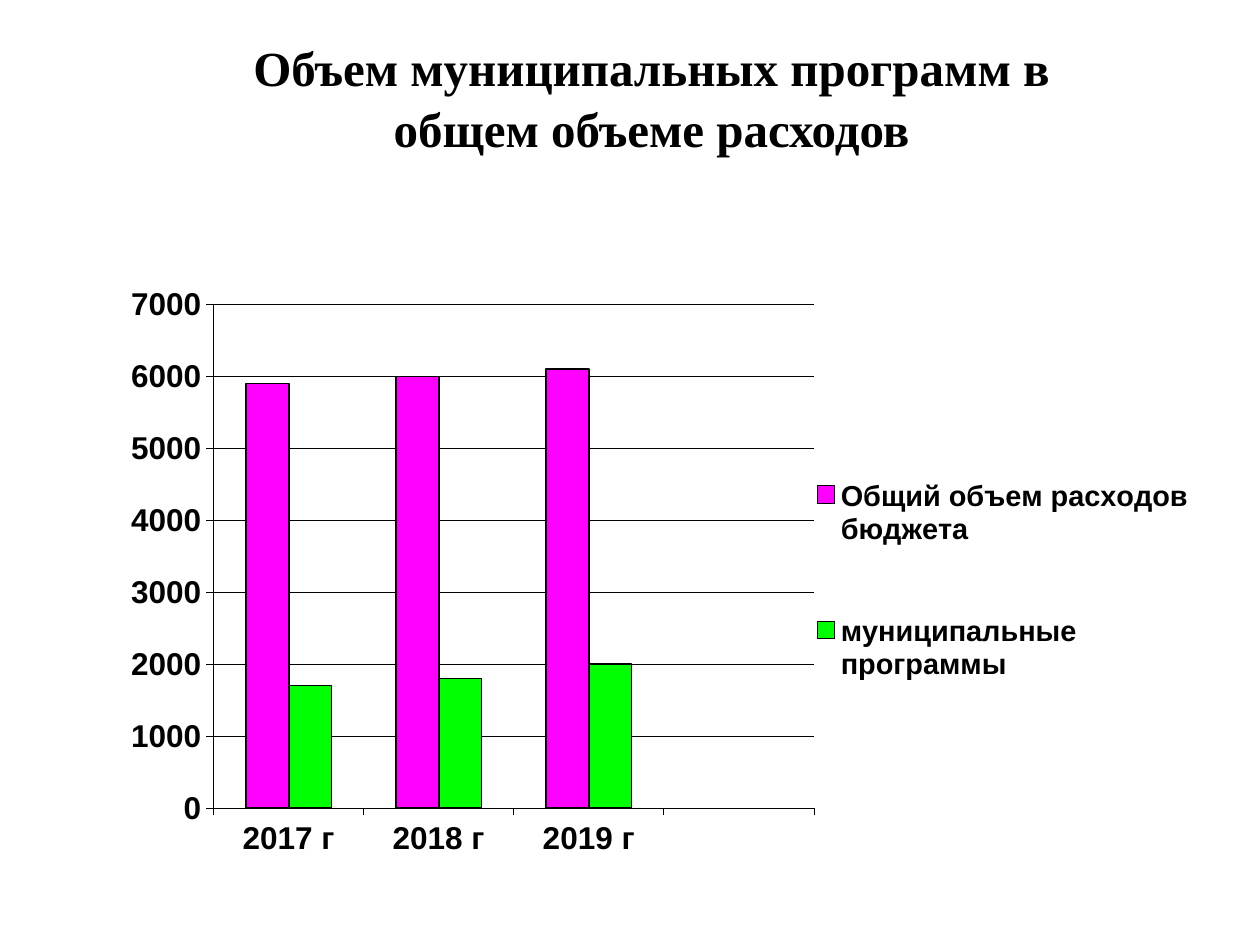
from pptx import Presentation, util as u
from pptx.chart.data import CategoryChartData
from pptx.dml.color import RGBColor
from pptx.enum import chart as ch, text as tx
from pptx.oxml import parse_xml
from pptx.oxml.ns import nsdecls

TITLE = ["Объем муниципальных программ в", "общем объеме расходов"]
YEARS = ["2017 г", "2018 г", "2019 г", ""]
ROWS = [
    ("Общий объем расходов бюджета", "total", [5900, 6000, 6100, None]),
    ("муниципальные программы", "plan", [1700, 1800, 2000, None]),
]
HUES = {"ink": "000000", "total": "FF00FF", "plan": "00FF00", "back": "FFFFFF"}
WIDE, HIGH = 10, 7.5
HEAD = (0.067, 0.033, 0.9, 0.167)
PLOT = (0.064, 0.292, 0.887, 0.645)
INNER = (0.119, 0.047, 0.537, 0.826)
LEGEND = (0.65, 0.22, 0.35, 0.56)


def hue(name):
    return RGBColor.from_string(HUES[name])


def box(part):
    return [u.Inches(p * s) for p, s in zip(part, (WIDE, HIGH) * 2)]


def style(font, size, face="Arial"):
    font.size, font.name, font.bold = u.Pt(size), face, True
    font.color.rgb = hue("ink")


def write(frame, lines, size, face, gap=0):
    for i, line in enumerate(lines):
        para = frame.paragraphs[0] if i == 0 else frame.add_paragraph()
        para.alignment = tx.PP_ALIGN.CENTER
        para.space_before = u.Pt(gap if i else 0)
        run = para.add_run()
        run.text = line
        style(run.font, size, face)


def stroke(line, width):
    line.color.rgb = hue("ink")
    line.width = u.Pt(width)


def place(part, area, inner=False):
    old = part.find("{*}layout")
    if old is not None:
        part.remove(old)
    target = '<c:layoutTarget val="inner"/>' if inner else ""
    modes = '<c:xMode val="edge"/><c:yMode val="edge"/>'
    sides = "".join(f'<c:{k} val="{v}"/>' for k, v in zip("xywh", area))
    node = parse_xml(
        f'<c:layout {nsdecls("c")}><c:manualLayout>{target}{modes}{sides}'
        "</c:manualLayout></c:layout>")
    if inner:
        part.insert(0, node)
    else:
        part.find("{*}legendPos").addnext(node)


def draw(slide):
    data = CategoryChartData(number_format="General")
    data.categories = YEARS
    for name, _, vals in ROWS:
        data.add_series(name, vals)
    chart = slide.shapes.add_chart(
        ch.XL_CHART_TYPE.COLUMN_CLUSTERED, *box(PLOT), data).chart
    chart.has_title = False
    style(chart.font, 18)
    plot = chart.plots[0]
    plot.gap_width, plot.overlap = 150, 0
    plot.vary_by_categories = False
    for bar, (_, key, _) in zip(plot.series, ROWS):
        bar.invert_if_negative = False
        bar.format.fill.solid()
        bar.format.fill.fore_color.rgb = hue(key)
        stroke(bar.format.line, 1)
    for axis in (chart.category_axis, chart.value_axis):
        style(axis.tick_labels.font, 18)
        stroke(axis.format.line, 0.25)
        axis.major_tick_mark = ch.XL_TICK_MARK.OUTSIDE
        axis.minor_tick_mark = ch.XL_TICK_MARK.NONE
    chart.category_axis.tick_label_position = ch.XL_TICK_LABEL_POSITION.LOW
    scale = chart.value_axis
    scale.minimum_scale, scale.maximum_scale, scale.major_unit = 0, 7000, 1000
    stroke(scale.major_gridlines.format.line, 0.25)
    chart.has_legend = True
    key = chart.legend
    key.position = ch.XL_LEGEND_POSITION.RIGHT
    key.include_in_layout = False
    style(key.font, 16.5)
    root = chart.element
    place(root.find(".//{*}plotArea"), INNER, True)
    place(root.find(".//{*}legend"), LEGEND)


def main():
    deck = Presentation()
    deck.slide_width, deck.slide_height = u.Inches(WIDE), u.Inches(HIGH)
    slide = deck.slides.add_slide(deck.slide_layouts[5])
    slide.background.fill.solid()
    slide.background.fill.fore_color.rgb = hue("back")
    head = slide.shapes.title
    head.left, head.top, head.width, head.height = box(HEAD)
    frame = head.text_frame
    frame.word_wrap = True
    frame.auto_size = tx.MSO_AUTO_SIZE.NONE
    frame.vertical_anchor = tx.MSO_ANCHOR.TOP
    write(frame, TITLE, 28, "Times New Roman", gap=1.5)
    draw(slide)
    deck.save("out.pptx")


if __name__ == "__main__":
    main()
